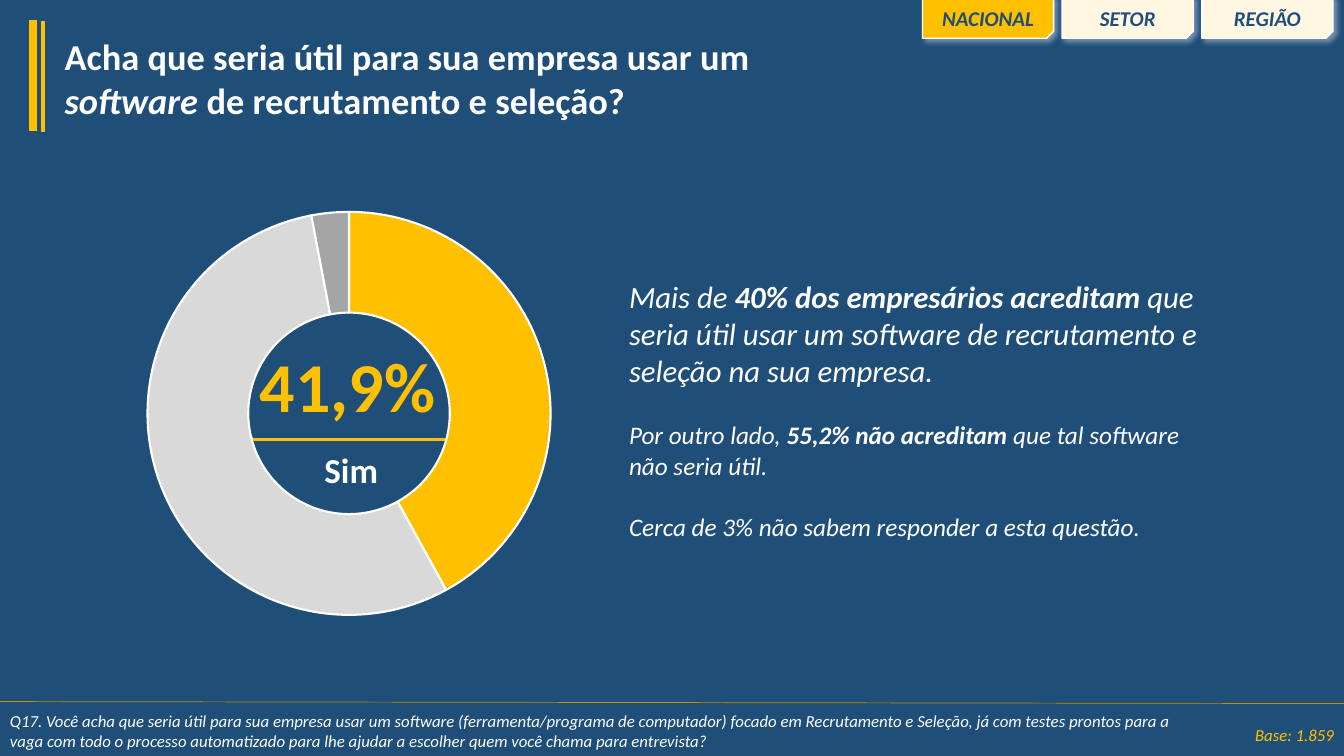
"""Build the survey slide about recruitment software."""
from dataclasses import dataclass

from lxml.etree import SubElement
from pptx import Presentation
from pptx.chart.data import CategoryChartData
from pptx.dml.color import RGBColor
from pptx.enum.chart import XL_CHART_TYPE as ChartType
from pptx.enum.shapes import MSO_CONNECTOR as Connector, MSO_SHAPE as Shape
from pptx.enum.text import MSO_ANCHOR as Anchor, PP_ALIGN as Align
from pptx.oxml import parse_xml
from pptx.oxml.ns import nsdecls, qn
from pptx.util import Inches, Pt


@dataclass(frozen=True)
class Theme:
    font: str = "Calibri"
    navy: str = "1F4E79"
    gold: str = "FFC000"
    dark_gold: str = "BF9000"
    cream: str = "FFF7E1"
    white: str = "FFFFFF"
    black: str = "000000"
    light_gray: str = "D9D9D9"
    gray: str = "A5A5A5"
    figure: int = 50
    title: int = 26
    answer: int = 25
    lead: int = 22
    body: int = 18
    tab: int = 15
    note: int = 12
    chart: int = 10


THEME = Theme()


def rgb(value):
    return RGBColor.from_string(value)


def box(*lengths):
    return [Inches(length) for length in lengths]


def add_runs(paragraph, runs, size, color, styles=""):
    """Add (text, extra styles) runs, where styles hold b for bold and i for italic."""
    for text, extra in runs:
        run = paragraph.add_run()
        run.text = text
        font = run.font
        font.name, font.size = THEME.font, Pt(size)
        font.color.rgb = rgb(color)
        font.bold = "b" in styles + extra
        font.italic = "i" in styles + extra


def add_text(slide, place, text, size, color, styles, align=Align.LEFT,
             anchor=Anchor.TOP, wrap=True):
    frame = slide.shapes.add_textbox(*box(*place)).text_frame
    frame.word_wrap = wrap
    frame.vertical_anchor = anchor
    frame.paragraphs[0].alignment = align
    add_runs(frame.paragraphs[0], [(text, "")], size, color, styles)


def add_line(slide, start, end, color, width, tip=None):
    line = slide.shapes.add_connector(Connector.STRAIGHT, *box(*start, *end))
    line.line.color.rgb = rgb(color)
    line.line.width = Pt(width)
    if tip:
        outline = line.line._get_or_add_ln()
        for name in ("a:headEnd", "a:tailEnd"):
            SubElement(outline, qn(name), type=tip)
    SubElement(line._element.spPr, qn("a:effectLst"))


def add_title(slide):
    title = slide.shapes.title
    title.left, title.top, title.width, title.height = box(0.54, 0.29, 7.08, 0.98)
    frame = title.text_frame
    frame.word_wrap = True
    frame.vertical_anchor = Anchor.TOP
    paragraph = frame.paragraphs[0]
    paragraph.alignment = Align.LEFT
    runs = [("Acha que seria útil para sua empresa usar um ", ""),
            ("software", "i"), (" de recrutamento e seleção?", "")]
    add_runs(paragraph, runs, THEME.title, THEME.white, "b")


def add_tab(slide, left, label, fill):
    tab = slide.shapes.add_shape(Shape.SNIP_1_RECTANGLE, *box(left, -0.04, 1.3, 0.42))
    tab.fill.solid()
    tab.fill.fore_color.rgb = rgb(fill)
    tab.line.color.rgb = rgb(THEME.white)
    tab.line.width = Pt(1)
    tab.shadow.inherit = False
    properties = tab._element.spPr
    properties.find(qn("a:xfrm")).set("flipV", "1")
    properties.find(qn("a:effectLst")).append(parse_xml(
        f'<a:outerShdw {nsdecls("a")} blurRad="{Pt(4)}" dist="{Pt(3)}" '
        f'dir="2700000" algn="tl" rotWithShape="0"><a:srgbClr val="{THEME.white}">'
        '<a:alpha val="40000"/></a:srgbClr></a:outerShdw>'))
    add_text(slide, (left, 0.01, 1.3, 0.35), label, THEME.tab, THEME.navy, "bi",
             Align.CENTER)


def place_plot(chart, left, top, width, height):
    """Fix the inner plot area as fractions of the chart frame."""
    area = chart._chartSpace.chart.plotArea
    for layout in area.findall(qn("c:layout")):
        area.remove(layout)
    values = {"x": left, "y": top, "w": width, "h": height}
    sizes = "".join(f'<c:{name} val="{value}"/>' for name, value in values.items())
    area.insert(0, parse_xml(
        f'<c:layout {nsdecls("c")}><c:manualLayout><c:layoutTarget val="inner"/>'
        f'<c:xMode val="edge"/><c:yMode val="edge"/>{sizes}'
        '</c:manualLayout></c:layout>'))


def add_doughnut(slide):
    data = CategoryChartData()
    data.categories = ["1", "2", "3"]
    data.add_series("Series 1", (42, 55, 3))
    chart = slide.shapes.add_chart(
        ChartType.DOUGHNUT, *box(0.18, 1.95, 6.48, 4.19), data).chart
    chart.has_legend = chart.has_title = False
    chart.font.name, chart.font.size = THEME.font, Pt(THEME.chart)
    chart.font.color.rgb = rgb(THEME.black)
    plot = chart.plots[0]
    plot.vary_by_categories = True
    plot._element.find(qn("c:holeSize")).set("val", "73")
    for index, color in enumerate((THEME.gold, THEME.light_gray, THEME.gray)):
        style = plot.series[0].points[index].format
        style.fill.solid()
        style.fill.fore_color.rgb = rgb(color)
        style.line.color.rgb = rgb(THEME.white)
        style.line.width = Pt(1.5)
    place_plot(chart, 0.198, 0.027, 0.617, 0.973)


def add_findings(slide):
    findings = [
        (THEME.lead, [("Mais de ", ""), ("40% dos empresários acreditam ", "b"),
                      ("que seria útil usar um software de recrutamento e seleção "
                       "na sua empresa.", "")]),
        (THEME.body, [("Por outro lado, ", ""), ("55,2% não acreditam ", "b"),
                      ("que tal software não seria útil.", "")]),
        (THEME.body, [("Cerca de 3% não sabem responder a esta questão.", "")]),
    ]
    frame = slide.shapes.add_textbox(*box(6.14, 2.71, 6.01, 2.73)).text_frame
    frame.word_wrap = True
    for index, (size, runs) in enumerate(findings):
        paragraph = frame.add_paragraph() if index else frame.paragraphs[0]
        paragraph.space_before = Pt(22 if index else 0)
        add_runs(paragraph, runs, size, THEME.white, "i")


def add_footer(slide):
    question = ("Q17. Você acha que seria útil para sua empresa usar um software "
                "(ferramenta/programa de computador) focado em Recrutamento e Seleção, "
                "já com testes prontos para a vaga com todo o processo automatizado "
                "para lhe ajudar a escolher quem você chama para entrevista?")
    add_text(slide, (0, 7, 11.75, 0.5), question, THEME.note, THEME.white, "i")
    add_line(slide, (0, 6.96), (13.33, 6.98), THEME.dark_gold, 0.5)
    add_text(slide, (12.16, 7.12, 1.17, 0.34), "Base: 1.859", THEME.note, THEME.gold,
             "i", Align.RIGHT, Anchor.MIDDLE)


def main():
    presentation = Presentation()
    presentation.slide_width, presentation.slide_height = box(13.33, 7.5)
    slide = presentation.slides.add_slide(presentation.slide_layouts[5])
    slide.background.fill.solid()
    slide.background.fill.fore_color.rgb = rgb(THEME.navy)

    add_line(slide, (2.48, 4.36), (5.24, 4.36), THEME.gold, 2.25, "diamond")
    add_line(slide, (0.33, 0.2), (0.33, 1.3), THEME.gold, 6)
    add_line(slide, (0.43, 0.21), (0.43, 1.31), THEME.gold, 3)
    add_title(slide)
    add_footer(slide)
    for index, label in enumerate(("NACIONAL", "SETOR", "REGIÃO")):
        fill = THEME.cream if index else THEME.gold
        add_tab(slide, 9.15 + 1.385 * index, label, fill)
    add_doughnut(slide)
    add_text(slide, (2.48, 3.35, 1.96, 0.94), "41,9%", THEME.figure, THEME.gold, "b",
             wrap=False)
    add_text(slide, (3.12, 4.4, 0.74, 0.52), "Sim", THEME.answer, THEME.white, "b",
             wrap=False)
    add_findings(slide)
    presentation.save("out.pptx")


if __name__ == "__main__":
    main()
